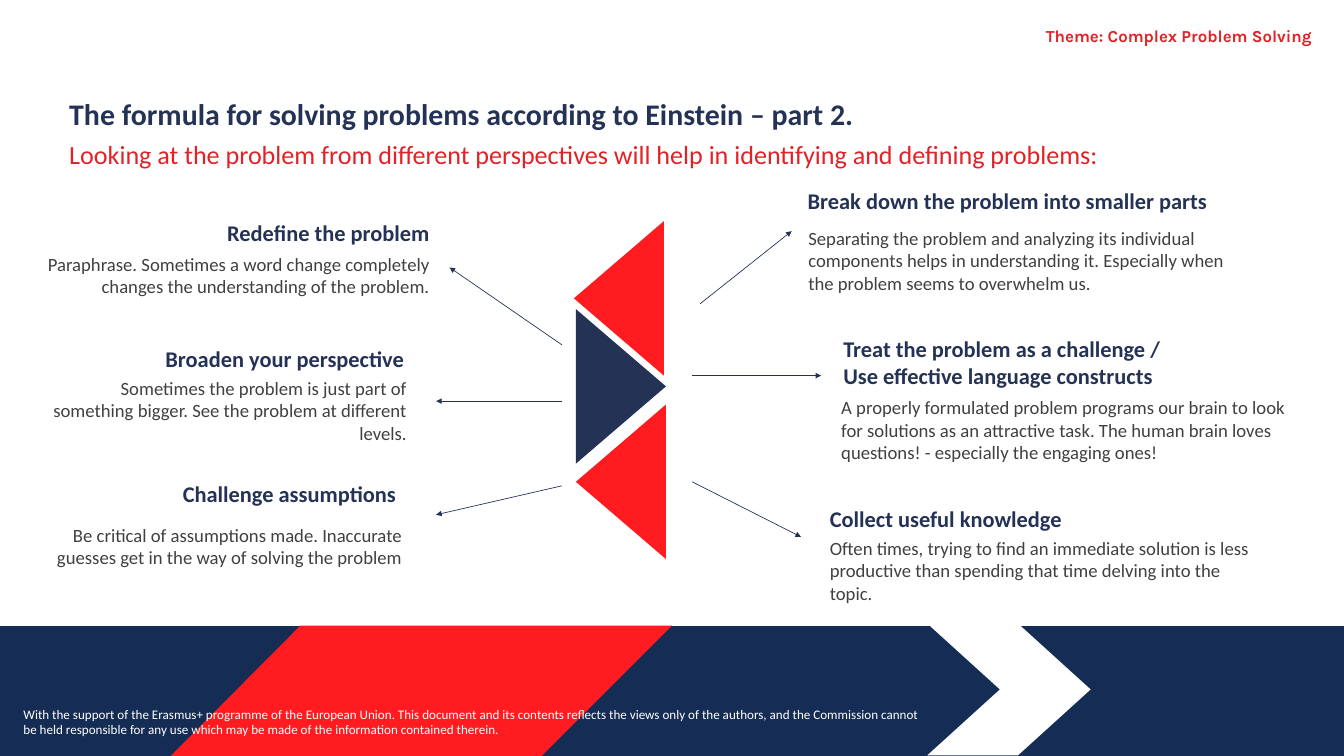
"""Build a slide on looking at a problem from six perspectives."""
import lxml.etree
import pptx
import pptx.dml.color
import pptx.enum.shapes
import pptx.enum.text
import pptx.oxml.ns
import pptx.util

Inches = pptx.util.Inches
Pt = pptx.util.Pt
RGBColor = pptx.dml.color.RGBColor
PP_ALIGN = pptx.enum.text.PP_ALIGN
MSO_ANCHOR = pptx.enum.text.MSO_ANCHOR
MSO_AUTO_SIZE = pptx.enum.text.MSO_AUTO_SIZE
qn = pptx.oxml.ns.qn

NAVY = RGBColor(0x24, 0x32, 0x55)
BAND = RGBColor(0x15, 0x2D, 0x54)
RED = RGBColor(0xFF, 0x1B, 0x20)
CRIMSON = RGBColor(0xE1, 0x22, 0x27)
GRAY = RGBColor(0x40, 0x40, 0x40)
WHITE = RGBColor(0xFF, 0xFF, 0xFF)

TITLE = {"name": "Calibri", "size": Pt(32), "bold": True}
SUBTITLE = {"name": "Calibri", "size": Pt(28), "bold": False}
HEADING = {"name": "Calibri", "size": Pt(24), "bold": True}
BODY = {"name": "Calibri", "size": Pt(20)}
FOOTER = {"name": "Calibri", "size": Pt(14)}
THEME = {"name": "Karla", "size": Pt(18), "bold": True}

LEFT, RIGHT, JUSTIFY = PP_ALIGN.LEFT, PP_ALIGN.RIGHT, PP_ALIGN.JUSTIFY

PERSPECTIVES = [
    ("Break down the problem into smaller parts", (11.92, 2.74, 6.8, 0.5), JUSTIFY,
     "Separating the problem and analyzing its individual components helps in "
     "understanding it. Especially when the problem seems to overwhelm us.",
     (11.93, 3.32, 6.62, 1.11), LEFT),
    ("Treat the problem as a challenge / \vUse effective language constructs",
     (12.45, 4.93, 6.62, 0.91), LEFT,
     "A properly formulated problem programs our brain to look for solutions as an "
     "attractive task. The human brain loves questions! - especially the engaging ones!",
     (12.42, 5.84, 6.84, 1.11), LEFT),
    ("Collect useful knowledge", (12.25, 7.46, 4.4, 0.5), LEFT,
     "Often times, trying to find an immediate solution is less productive than "
     "spending that time delving into the topic.",
     (12.25, 7.93, 6.47, 1.11), LEFT),
    ("Redefine the problem", (0.8, 3.21, 5.69, 0.5), RIGHT,
     "Paraphrase. Sometimes a word change completely changes the understanding "
     "of the problem.",
     (0.4, 3.71, 6.09, 0.77), RIGHT),
    ("Broaden your perspective", (0.5, 5.08, 5.61, 0.5), RIGHT,
     "Sometimes the problem is just part of something bigger. See the problem at "
     "different levels.",
     (0.54, 5.55, 5.61, 1.11), RIGHT),
    ("Challenge assumptions", (2.17, 7.1, 3.82, 0.5), RIGHT,
     "Be critical of assumptions made. Inaccurate guesses get in the way of solving "
     "the problem",
     (0.54, 7.74, 5.54, 0.77), RIGHT),
]

ARROWS = [
    (10.42, 4.52, 11.78, 3.44),
    (10.3, 7.17, 11.92, 7.99),
    (10.3, 5.59, 12.22, 5.59),
    (8.36, 5.13, 6.69, 3.98),
    (8.36, 7.23, 6.49, 7.66),
    (8.36, 5.97, 6.49, 5.97),
]


def set_attributes(target, values):
    """Set each attribute in values on target."""
    for name, value in values.items():
        setattr(target, name, value)


def write(p, text, font, color, align=LEFT):
    """Fill a paragraph with formatted text."""
    p.text = text
    p.alignment = align
    for r in p.runs:
        set_attributes(r.font, font)
        r.font.color.rgb = color


def add_text(shapes, box, text, font, color, align=LEFT, **frame):
    """Add a wrapping text box that grows with its text."""
    s = shapes.add_textbox(*map(Inches, box))
    tf = s.text_frame
    set_attributes(tf, {"word_wrap": True, "auto_size": MSO_AUTO_SIZE.SHAPE_TO_FIT_TEXT, **frame})
    write(tf.paragraphs[0], text, font, color, align)


def add_polygon(shapes, points, color):
    """Add a filled closed outline without a border."""
    start, *rest = [(Inches(x), Inches(y)) for x, y in points]
    builder = shapes.build_freeform(*start)
    builder.add_line_segments(rest, close=True)
    s = builder.convert_to_shape()
    s.shadow.inherit = False
    s.fill.solid()
    s.fill.fore_color.rgb = color
    s.line.fill.background()


def add_triangle(shapes, tip, base, middle, color):
    """Add a triangle pointing sideways from its base to its tip."""
    half = 1.15
    add_polygon(shapes, [(tip, middle), (base, middle - half), (base, middle + half)], color)


def add_arrow(shapes, ends):
    """Add a thin straight arrow."""
    s = shapes.add_connector(pptx.enum.shapes.MSO_CONNECTOR.STRAIGHT, *map(Inches, ends))
    s.line.color.rgb = NAVY
    s.line.width = Pt(0.75)
    lxml.etree.SubElement(s.line._get_or_add_ln(), qn("a:tailEnd"), type="triangle")
    lxml.etree.SubElement(s._element.spPr, qn("a:effectLst"))


def add_perspective(shapes, heading, heading_box, heading_align, body, body_box, body_align):
    """Add a grouped heading and explanation."""
    group = shapes.add_group_shape().shapes
    middle = {"vertical_anchor": MSO_ANCHOR.MIDDLE}
    add_text(group, body_box, body, BODY, GRAY, body_align, **middle)
    add_text(group, heading_box, heading, HEADING, NAVY, heading_align, **middle)


def add_band(shapes):
    """Add the footer band with its chevron and slanted stripe."""
    top, bottom = 9.31, 11.25
    add_polygon(shapes, [(0, top), (20, top), (20, bottom), (0, bottom)], BAND)
    add_polygon(shapes, [(13.8, 9.28), (15.15, 9.28), (16.23, 10.26),
                         (15.15, 11.24), (13.8, 11.24), (14.88, 10.26)], WHITE)
    add_polygon(shapes, [(4.47, top), (10, top), (8.06, bottom), (2.54, bottom)], RED)


def fill_title(s):
    """Place the title placeholder and write its two lines."""
    set_attributes(s, {"left": Inches(1.03), "top": Inches(1.23),
                       "width": Inches(18.14), "height": Inches(1.31)})
    tf = s.text_frame
    set_attributes(tf, {"margin_left": 0, "margin_top": Inches(0.2), "margin_right": 0,
                        "margin_bottom": 0, "word_wrap": True,
                        "vertical_anchor": MSO_ANCHOR.TOP, "auto_size": MSO_AUTO_SIZE.NONE})
    p = tf.paragraphs[0]
    write(p, "The formula for solving problems according to Einstein – part 2.", TITLE, NAVY)
    p.space_after = Pt(6)
    p = tf.add_paragraph()
    write(p, "Looking at the problem from different perspectives will help in "
             "identifying and defining problems:", SUBTITLE, CRIMSON)
    p.space_before = Pt(1.1)


def main():
    """Build and save the slide."""
    prs = pptx.Presentation()
    prs.slide_width, prs.slide_height = Inches(20), Inches(11.25)
    slide = prs.slides.add_slide(prs.slide_layouts[5])
    shapes = slide.shapes
    fill_title(shapes.title)
    add_band(shapes)
    add_text(shapes, (0.25, 10.46, 13.75, 0.57),
             "With the support of the Erasmus+ programme of the European Union. This document "
             "and its contents reflects the views only of the authors, and the Commission cannot "
             "be held responsible for any use which may be made of the information contained "
             "therein.", FOOTER, WHITE)
    for perspective in PERSPECTIVES:
        add_perspective(shapes, *perspective)
    add_triangle(shapes, 8.54, 9.88, 4.44, RED)
    add_triangle(shapes, 9.91, 8.57, 5.75, NAVY)
    add_triangle(shapes, 8.57, 9.91, 7.17, RED)
    for ends in ARROWS:
        add_arrow(shapes, ends)
    add_text(shapes, (9, 0.37, 10.52, 0.32), "Theme: Complex Problem Solving", THEME, CRIMSON,
             RIGHT, margin_left=0, margin_top=Inches(0.01), margin_right=0, margin_bottom=0)
    prs.save("out.pptx")


if __name__ == "__main__":
    main()
